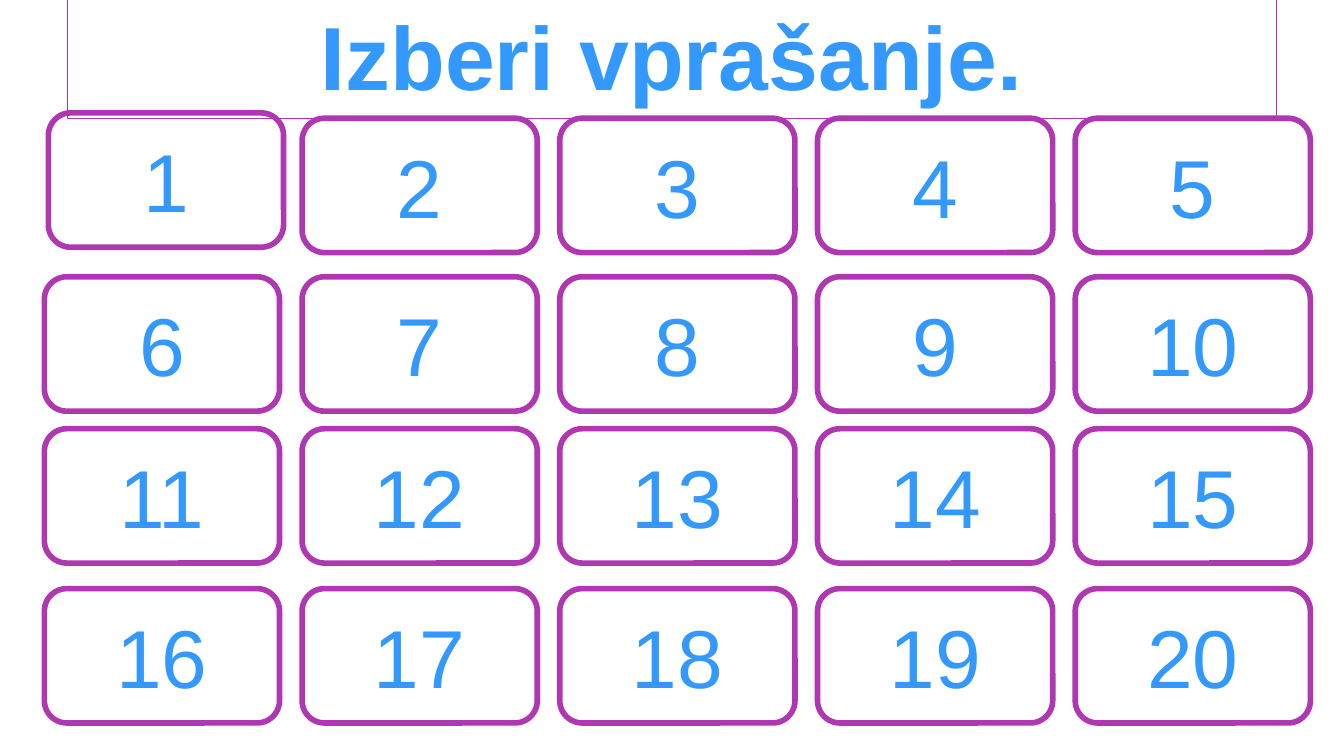
from pptx import Presentation
from pptx.dml.color import RGBColor
from pptx.enum.shapes import MSO_SHAPE
from pptx.enum.text import MSO_ANCHOR, MSO_AUTO_SIZE, PP_ALIGN
from pptx.util import Inches, Pt

BLUE = RGBColor(0x33, 0x99, 0xFF)
PURPLE = RGBColor(0xAF, 0x38, 0xB2)

COLUMNS = 5
FIRST_LEFT, LAST_LEFT = 0.33, 8
COLUMN_STEP = (LAST_LEFT - FIRST_LEFT) / (COLUMNS - 1)
ROW_TOPS = [0.88, 2.06, 3.19, 4.38]


def write_centred(shape, text, size, bold):
    frame = shape.text_frame
    frame.auto_size = MSO_AUTO_SIZE.NONE
    frame.vertical_anchor = MSO_ANCHOR.MIDDLE
    para = frame.paragraphs[0]
    para.alignment = PP_ALIGN.CENTER
    span = para.add_run()
    span.text = text
    span.font.name = "Arial"
    span.font.size = Pt(size)
    span.font.bold = bold
    span.font.color.rgb = BLUE


deck = Presentation()
deck.slide_width = Inches(10)
deck.slide_height = Inches(10 * 9 / 16)
page = deck.slides.add_slide(deck.slide_layouts[5])

title = page.shapes.title
title.left, title.top = Inches(0.5), Inches(-0.06)
title.width, title.height = Inches(9), Inches(0.94)
title.line.color.rgb = PURPLE
title.line.width = Pt(0.75)
write_centred(title, "Izberi vprašanje.", 48, True)

for row, top in enumerate(ROW_TOPS):
    for column in range(COLUMNS):
        number = row * COLUMNS + column + 1
        left = FIRST_LEFT + column * COLUMN_STEP
        card = page.shapes.add_shape(
            MSO_SHAPE.ROUNDED_RECTANGLE,
            Inches(left), Inches(top), Inches(1.75), Inches(1),
        )
        # The first card sits slightly off the grid.
        if number == 1:
            card.left, card.top = Inches(0.36), Inches(0.84)
        card.shadow.inherit = False
        card.fill.background()
        card.line.color.rgb = PURPLE
        card.line.width = Pt(3)
        card.text_frame.word_wrap = False
        write_centred(card, str(number), 44, False)

deck.save("out.pptx")
